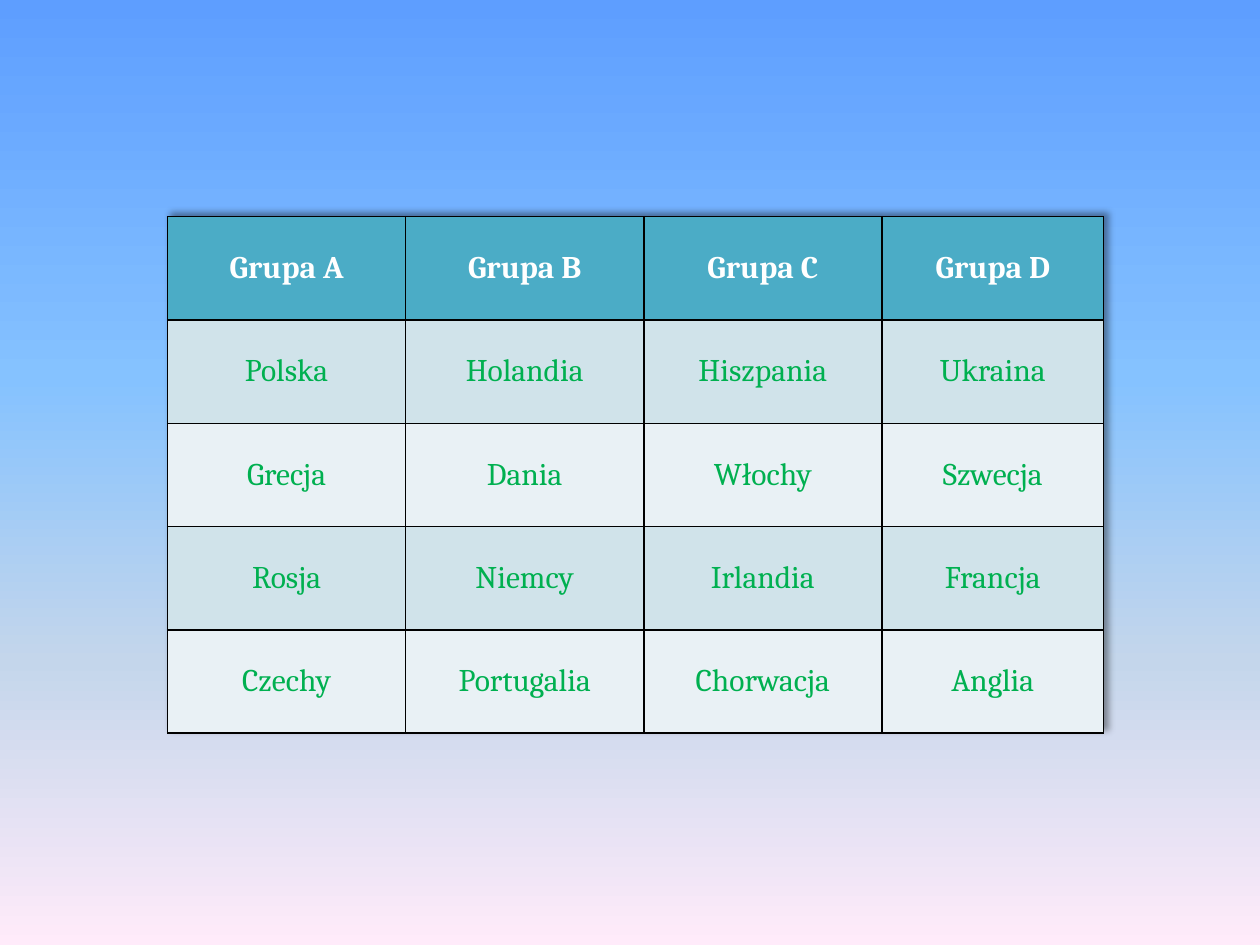
"""Build a slide with the four tournament groups in one table."""
from dataclasses import dataclass

import lxml.etree
import pptx
import pptx.dml.color
import pptx.enum.text
import pptx.oxml
import pptx.oxml.ns
import pptx.presentation
import pptx.slide
import pptx.table
import pptx.util

RGBColor = pptx.dml.color.RGBColor
qn = pptx.oxml.ns.qn

WHITE = RGBColor(0xFF, 0xFF, 0xFF)
BLACK = RGBColor(0x00, 0x00, 0x00)
GREEN = RGBColor(0x00, 0xB0, 0x50)
TEAL = RGBColor(0x4B, 0xAC, 0xC6)
BAND_DARK = RGBColor(0xD0, 0xE3, 0xEA)
BAND_LIGHT = RGBColor(0xE9, 0xF1, 0xF5)
SKY = {
    0: RGBColor(0x5E, 0x9E, 0xFF),
    40: RGBColor(0x85, 0xC2, 0xFF),
    70: RGBColor(0xC4, 0xD6, 0xEB),
    100: RGBColor(0xFF, 0xEB, 0xFA),
}

SLIDE_WIDTH, SLIDE_HEIGHT = pptx.util.Inches(10), pptx.util.Inches(7.5)
TABLE_LEFT, TABLE_TOP = pptx.util.Inches(1.33), pptx.util.Inches(1.72)
COLUMN_WIDTHS = [pptx.util.Inches(width) for width in (1.89, 1.89, 1.89, 1.76)]
ROW_HEIGHT = pptx.util.Inches(0.82)
BORDER_WIDTH = pptx.util.Pt(1)


@dataclass(frozen=True)
class Group:
    name: str
    teams: tuple[str, ...]


@dataclass(frozen=True)
class RowStyle:
    fill: RGBColor
    text: RGBColor
    bold: bool = False


GROUPS = (
    Group("Grupa A", ("Polska", "Grecja", "Rosja", "Czechy")),
    Group("Grupa B", ("Holandia", "Dania", "Niemcy", "Portugalia")),
    Group("Grupa C", ("Hiszpania", "Włochy", "Irlandia", "Chorwacja")),
    Group("Grupa D", ("Ukraina", "Szwecja", "Francja", "Anglia")),
)
HEADER = RowStyle(TEAL, WHITE, bold=True)
BANDS = (RowStyle(BAND_DARK, GREEN), RowStyle(BAND_LIGHT, GREEN))


def drawing_xml(tag: str, attributes: str, content: str) -> lxml.etree._Element:
    """Return one DrawingML element."""
    return pptx.oxml.parse_xml(
        f'<a:{tag} {pptx.oxml.ns.nsdecls("a")} {attributes}>{content}</a:{tag}>'
    )


def paint_background(slide: pptx.slide.Slide) -> None:
    """Fill the background with the sky gradient from top to bottom."""
    fill = slide.background.fill
    fill.gradient()
    fill.gradient_angle = 270
    stops = slide.element.find(f".//{qn('a:gsLst')}")
    for stop in list(stops):
        stops.remove(stop)
    for percent, color in SKY.items():
        stops.append(
            drawing_xml("gs", f'pos="{percent * 1000}"', f'<a:srgbClr val="{color}"/>')
        )


def write_cell(cell: pptx.table._Cell, text: str, style: RowStyle) -> None:
    """Write centred text in a filled cell."""
    cell.fill.solid()
    cell.fill.fore_color.rgb = style.fill
    cell.vertical_anchor = pptx.enum.text.MSO_ANCHOR.MIDDLE
    cell.text = text
    para = cell.text_frame.paragraphs[0]
    para.alignment = pptx.enum.text.PP_ALIGN.CENTER
    para.font.name = "Cambria"
    para.font.size = pptx.util.Pt(18)
    para.font.bold = style.bold
    para.font.color.rgb = style.text


def add_borders(properties: lxml.etree._Element) -> None:
    """Put a black line on each side of a cell."""
    line = f'<a:solidFill><a:srgbClr val="{BLACK}"/></a:solidFill>'
    for index, side in enumerate(("lnL", "lnR", "lnT", "lnB")):
        properties.insert(index, drawing_xml(side, f'w="{BORDER_WIDTH}"', line))


def add_shadow(properties: lxml.etree._Element) -> None:
    """Cast a soft shadow up and to the right of the table."""
    shadow = (
        '<a:outerShdw blurRad="50800" dist="38100" dir="18900000" algn="bl" rotWithShape="0">'
        f'<a:srgbClr val="{BLACK}"><a:alpha val="40000"/></a:srgbClr></a:outerShdw>'
    )
    properties.insert(0, drawing_xml("effectLst", "", shadow))


def add_group_table(slide: pptx.slide.Slide, groups: tuple[Group, ...]) -> None:
    """Draw one column per group, with its name above its teams."""
    row_count = 1 + len(groups[0].teams)
    frame = slide.shapes.add_table(
        row_count, len(groups), TABLE_LEFT, TABLE_TOP,
        sum(COLUMN_WIDTHS), ROW_HEIGHT * row_count,
    )
    table = frame.table
    for row in table.rows:
        row.height = ROW_HEIGHT
    for column_index, group in enumerate(groups):
        table.columns[column_index].width = COLUMN_WIDTHS[column_index]
        write_cell(table.cell(0, column_index), group.name, HEADER)
        for team_index, team in enumerate(group.teams):
            style = BANDS[team_index % len(BANDS)]
            write_cell(table.cell(team_index + 1, column_index), team, style)
    for properties in frame.element.iter(qn("a:tcPr")):
        add_borders(properties)
    add_shadow(frame.element.find(f".//{qn('a:tblPr')}"))


def main() -> None:
    """Build and save the deck."""
    deck = pptx.Presentation()
    deck.slide_width, deck.slide_height = SLIDE_WIDTH, SLIDE_HEIGHT
    slide = deck.slides.add_slide(deck.slide_layouts.get_by_name("Blank"))
    paint_background(slide)
    add_group_table(slide, GROUPS)
    deck.save("out.pptx")


if __name__ == "__main__":
    main()
